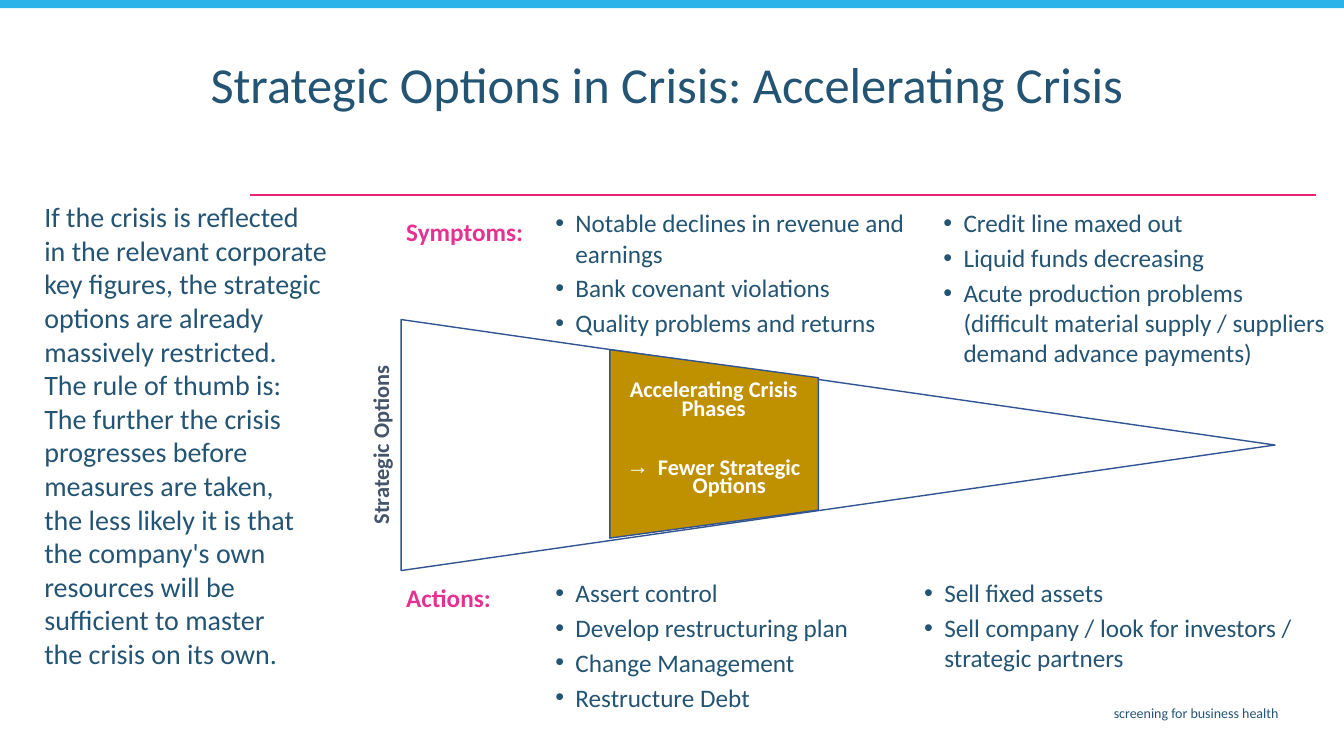
from dataclasses import dataclass
from lxml.etree import SubElement
from pptx import Presentation
from pptx.dml.color import RGBColor
from pptx.enum.shapes import MSO_CONNECTOR, MSO_SHAPE
from pptx.enum.text import PP_ALIGN
from pptx.oxml.ns import qn
from pptx.util import Pt


@dataclass(frozen=True)
class Theme:
    """Colours, type sizes and spacing of the slide."""
    font: str = "Calibri"
    navy: str = "245473"
    sky: str = "29B3E8"
    rule: str = "EC2179"
    pink: str = "E53292"
    gold: str = "BF9000"
    edge: str = "325491"
    slate: str = "44546A"
    white: str = "FFFFFF"
    title: int = 36
    body: int = 20
    item: int = 18
    label: int = 16
    foot: int = 10
    tight: float = 13.1
    gap: float = 3.3


T = Theme()
SMALL = (2.9, 1.4)


def add_box(slide, area, inset=SMALL):
    """Add a wrapping text box and return its frame."""
    frame = slide.shapes.add_textbox(*map(Pt, area)).text_frame
    frame.word_wrap = True
    frame.margin_left = frame.margin_right = Pt(inset[0])
    frame.margin_top = frame.margin_bottom = Pt(inset[1])
    return frame


def add_para(frame, text, size, color=T.navy, bold=False, align=PP_ALIGN.LEFT,
             lead=None, before=0, mark=None, indent=14.4):
    """Add one paragraph, with a line break between the lines of its text."""
    first = frame.paragraphs[0]
    para = frame.add_paragraph() if first.runs else first
    para.alignment = align
    if lead:
        para.line_spacing = lead
    para.space_before = Pt(before)
    if mark:
        props = para._p.get_or_add_pPr()
        props.set("marL", str(Pt(indent)))
        props.set("indent", str(-Pt(indent)))
        SubElement(props, qn("a:buFont"), typeface="Arial")
        SubElement(props, qn("a:buChar"), char=mark)
    for count, line in enumerate(text.split("\n")):
        if count:
            para.add_line_break()
        run = para.add_run()
        run.text = line
        run.font.name = T.font
        run.font.size = Pt(size)
        run.font.bold = bold
        run.font.color.rgb = RGBColor.from_string(color)


def add_form(slide, kind, area, fill, edge=None, turn=0):
    """Add a filled preset shape."""
    form = slide.shapes.add_shape(kind, *map(Pt, area))
    form.shadow.inherit = False
    form.rotation = turn
    form.fill.solid()
    form.fill.fore_color.rgb = RGBColor.from_string(fill)
    if edge:
        form.line.color.rgb = RGBColor.from_string(edge)
        form.line.width = Pt(1)
    else:
        form.line.fill.background()
    return form


def add_rule(slide, left, right, top):
    """Add the level line under the title."""
    rule = slide.shapes.add_connector(
        MSO_CONNECTOR.STRAIGHT, Pt(left), Pt(top), Pt(right), Pt(top))
    rule.line.color.rgb = RGBColor.from_string(T.rule)
    rule.line.width = Pt(1.5)
    SubElement(rule._element.spPr, qn("a:effectLst"))


def add_group(slide, head, label, top, height, pitch, columns):
    """Add a pink heading and its columns of bullets."""
    frame = add_box(slide, (287.3, label, 148.3, 17.3))
    add_para(frame, head, T.item, T.pink, True, lead=Pt(T.tight))
    for col, items in enumerate(columns):
        frame = add_box(slide, (393.8 + col * pitch, top, pitch + 5.8, height))
        for row, item in enumerate(items):
            add_para(frame, item, T.item, before=T.gap if row else 0, mark="•")


def add_funnel(slide):
    """Add the narrowing funnel with its phase and side label."""
    add_form(slide, MSO_SHAPE.ISOSCELES_TRIANGLE, (509, 5.8, 179.3, 624.2),
             T.white, T.edge, 90)
    phase = add_form(slide, MSO_SHAPE.TRAPEZOID, (442.8, 242.6, 134.6, 149),
                     T.gold, T.edge, 90)
    phase.adjustments[0] = 0.149
    style = dict(size=T.label, bold=True, align=PP_ALIGN.CENTER,
                 lead=Pt(T.tight))
    frame = add_box(slide, (435.6, 272.9, 148.3, 103.7))
    add_para(frame, "Accelerating Crisis Phases", color=T.white, **style)
    add_para(frame, "Fewer Strategic\nOptions", color=T.white, before=29.3,
             mark="→", indent=22.3, **style)
    side = slide.shapes.add_textbox(Pt(200.9), Pt(309.6), Pt(148.3), Pt(16.6))
    side.rotation = 270
    frame = side.text_frame
    frame.word_wrap = True
    frame.margin_top = frame.margin_bottom = Pt(SMALL[1])
    add_para(frame, "Strategic Options", color=T.slate, **style)


def main():
    """Build the slide and save it."""
    deck = Presentation()
    deck.slide_width, deck.slide_height = Pt(960), Pt(540)
    slide = deck.slides.add_slide(deck.slide_layouts[6])
    add_rule(slide, 178.6, 940.3, 139)
    add_form(slide, MSO_SHAPE.RECTANGLE, (0, 0, 960, 5.8), T.sky)
    add_para(add_box(slide, (262.8, 499.7, 657.4, 20.9), (7.2, 3.6)),
             "screening for business health", T.foot, align=PP_ALIGN.RIGHT)
    add_para(add_box(slide, (143.3, 39.6, 697, 54.7), (7.2, 3.6)),
             "Strategic Options in Crisis: Accelerating Crisis",
             T.title, lead=0.9)
    add_para(add_box(slide, (25.2, 139.7, 218.9, 352.1), (6.5, 2.9)),
             "If the crisis is reflected\n"
             "in the relevant corporate key figures, the strategic options "
             "are already massively restricted.\n"
             "The rule of thumb is:\n"
             "The further the crisis progresses before measures are taken,\n"
             "the less likely it is that the company's own resources will be "
             "sufficient to master\n"
             "the crisis on its own.", T.body)
    add_funnel(slide)
    add_group(slide, "Symptoms:", 162, 146.9, 66.2, 277.2, (
        ("Notable declines in revenue and earnings",
         "Bank covenant violations",
         "Quality problems and returns"),
        ("Credit line maxed out",
         "Liquid funds decreasing",
         "Acute production problems (difficult material supply / suppliers "
         "demand advance payments)")))
    add_group(slide, "Actions:", 423.4, 411.1, 79.2, 263.5, (
        ("Assert control",
         "Develop restructuring plan",
         "Change Management",
         "Restructure Debt"),
        ("Sell fixed assets",
         "Sell company / look for investors / strategic partners")))
    deck.save("out.pptx")


if __name__ == "__main__":
    main()
